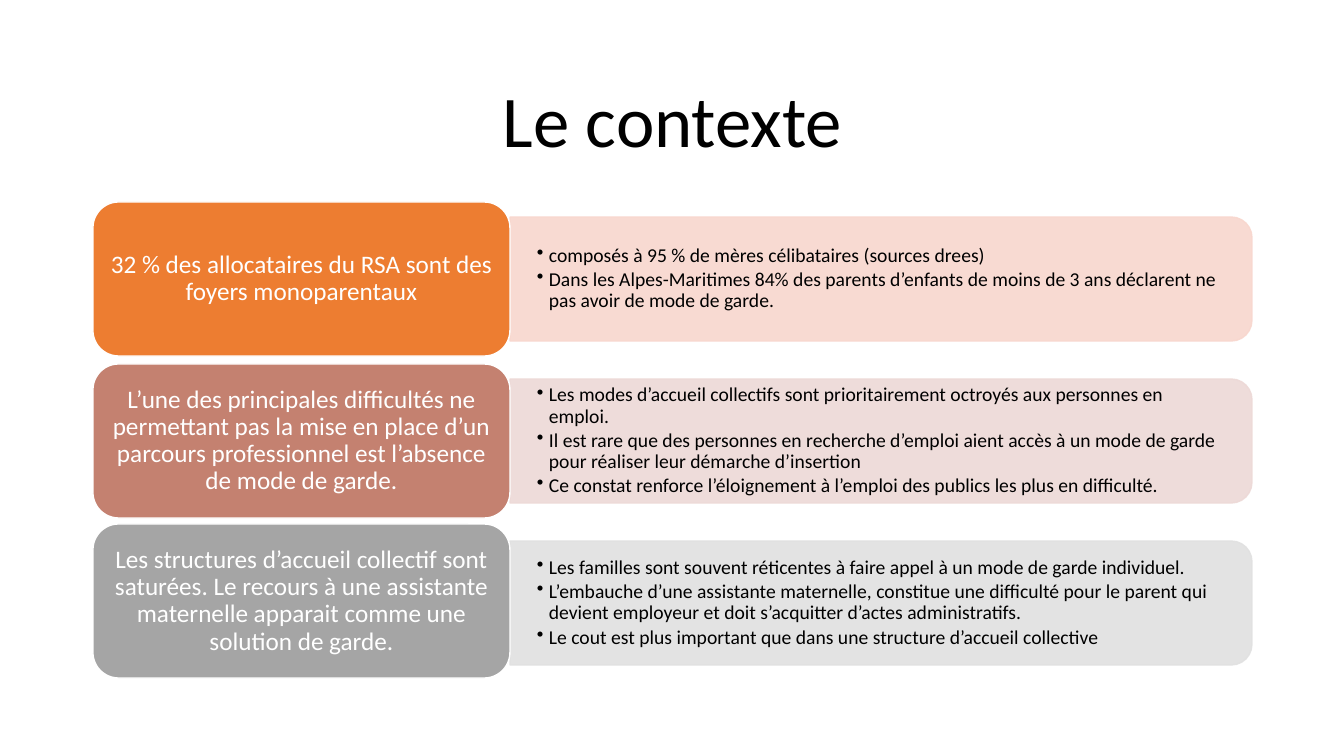
from lxml.etree import SubElement as Sub
from pptx import Presentation
from pptx.dml.color import RGBColor as RGB
from pptx.enum.shapes import MSO_SHAPE as Kind
from pptx.enum.text import MSO_ANCHOR as Anchor, MSO_AUTO_SIZE as Auto, PP_ALIGN as Align
from pptx.oxml.ns import qn
from pptx.util import Pt

# Content
TITLE = "Le contexte"
ROWS = [  # label top, label colour, panel colour, label, points
    (202, "ED7D31", "F8D7CE",
     "32 % des allocataires du RSA sont des foyers monoparentaux",
     ["composés à 95 % de mères célibataires (sources drees)",
      "Dans les Alpes-Maritimes 84% des parents d’enfants de moins de 3 ans "
      "déclarent ne pas avoir de mode de garde."]),
    (364, "C48170", "EDD9D7",
     "L’une des principales difficultés ne permettant pas la mise en place d’un "
     "parcours professionnel est l’absence de mode de garde.",
     ["Les modes d’accueil collectifs sont prioritairement octroyés aux personnes en emploi.",
      "Il est rare que des personnes en recherche d’emploi aient accès à un mode de garde "
      "pour réaliser leur démarche d’insertion",
      "Ce constat renforce l’éloignement à l’emploi des publics les plus en difficulté."]),
    (524, "A5A5A5", "E1E1E1",
     "Les structures d’accueil collectif sont saturées. Le recours à une assistante "
     "maternelle apparait comme une solution de garde.",
     ["Les familles sont souvent réticentes à faire appel à un mode de garde individuel.",
      "L’embauche d’une assistante maternelle, constitue une difficulté pour le parent qui "
      "devient employeur et doit s’acquitter d’actes administratifs.",
      "Le cout est plus important que dans une structure d’accueil collective"]),
]

# Layout in px
LEFT, LABEL_W, LABEL_H = 93, 417, 154
PANEL_X, PANEL_Y, PANEL_W, PANEL_H = 510, 217, 742, 124
PITCH = 162
TEXT_W, TEXT_H = 736, 112
INDENT = 12


def px(n):
    return round(n * 914400 / 100.8)


def box(x, y, w, h):
    return px(x), px(y), px(w), px(h)


def color(code):
    return RGB.from_string(code)


def paint(shape, fill, line):
    shape.shadow.inherit = False
    shape.fill.solid()
    shape.fill.fore_color.rgb = color(fill)
    shape.line.color.rgb = color(line)
    shape.line.width = Pt(1)


def setup(frame, side, top):
    frame.word_wrap = True
    frame.auto_size = Auto.NONE
    frame.vertical_anchor = Anchor.MIDDLE
    frame.margin_left = frame.margin_right = px(side)
    frame.margin_top = frame.margin_bottom = px(top)


def style(para, size, code, align):
    para.font.name = "Calibri"
    para.font.size = Pt(size)
    para.font.color.rgb = color(code)
    para.alignment = align
    para.line_spacing = 0.9


def add_panel(shapes, y, fill):
    # Turned a quarter so that the round corners face right
    shift = (PANEL_W - PANEL_H) / 2
    panel = shapes.add_shape(Kind.ROUND_2_SAME_RECTANGLE,
                             *box(PANEL_X + shift, y - shift, PANEL_H, PANEL_W))
    panel.rotation = 90
    paint(panel, fill, fill)
    for tone in panel.element.spPr.iter(qn("a:srgbClr")):
        Sub(tone, qn("a:alpha"), val="90000")


def add_points(shapes, y, points):
    inset = (PANEL_H - TEXT_H) / 2
    frame = shapes.add_textbox(*box(PANEL_X, y + inset, TEXT_W, TEXT_H)).text_frame
    setup(frame, 27, 14)
    frame.text = "\n".join(points)
    for para in frame.paragraphs:
        style(para, 14, "000000", Align.LEFT)
        para.space_after = Pt(2.1)
        props = para._p.get_or_add_pPr()
        props.set("marL", str(px(INDENT)))
        props.set("indent", str(-px(INDENT)))
        bullet = Sub(props, qn("a:buChar"), char="•")
        props.find(qn("a:defRPr")).addprevious(bullet)


def add_label(shapes, y, fill, text):
    label = shapes.add_shape(Kind.ROUNDED_RECTANGLE, *box(LEFT, y, LABEL_W, LABEL_H))
    paint(label, fill, "FFFFFF")
    setup(label.text_frame, 7, 4)
    label.text_frame.text = text
    style(label.text_frame.paragraphs[0], 18, "FFFFFF", Align.CENTER)


def main():
    deck = Presentation()
    deck.slide_width, deck.slide_height = px(1344), px(756)
    shapes = deck.slides.add_slide(deck.slide_layouts[5]).shapes

    # Title
    title = shapes.title
    title.left, title.top, title.width, title.height = box(93, 61, 1159, 125)
    setup(title.text_frame, 10, 5)
    title.text_frame.text = TITLE
    style(title.text_frame.paragraphs[0], 52, "000000", Align.CENTER)

    # Rows: panel, points, then the label on top
    for i, (top, fill, pale, text, points) in enumerate(ROWS):
        y = PANEL_Y + i * PITCH
        add_panel(shapes, y, pale)
        add_points(shapes, y, points)
        add_label(shapes, top, fill, text)

    deck.save("out.pptx")


if __name__ == "__main__":
    main()
